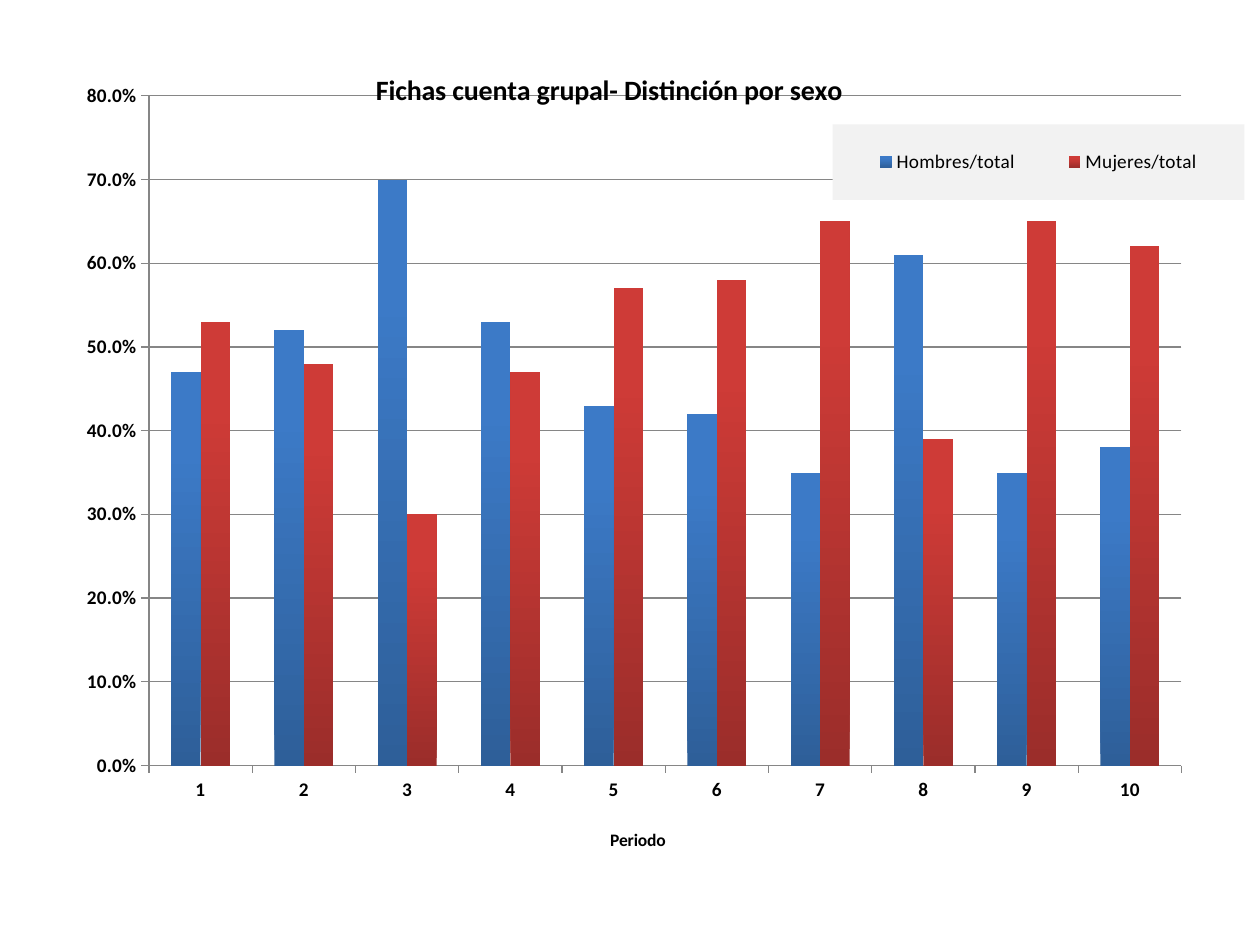
from lxml.etree import SubElement
from pptx import Presentation
from pptx.chart.data import CategoryChartData
from pptx.dml.color import RGBColor
from pptx.enum.chart import XL_CHART_TYPE as ChartType, XL_LEGEND_POSITION as LegendPos
from pptx.enum.chart import XL_TICK_MARK as Tick
from pptx.oxml.ns import qn
from pptx.util import Cm, Pt

# Content
TITLE = "Fichas cuenta grupal- Distinción por sexo"
AXIS_TITLE = "Periodo"
PERIODS = [str(n) for n in range(1, 11)]
# name, values, colour at the foot, colour at the top
SERIES = [
    ("Hombres/total", [0.47, 0.52, 0.70, 0.53, 0.43, 0.42, 0.35, 0.61, 0.35, 0.38],
     "2E5F99", "3C7AC7"),
    ("Mujeres/total", [0.53, 0.48, 0.30, 0.47, 0.57, 0.58, 0.65, 0.39, 0.65, 0.62],
     "9B2D2A", "CE3B37"),
]
FONT, BLACK, GREY, PALE = "Calibri", "000000", "868686", "F2F2F2"


def color(hex_value):
    return RGBColor.from_string(hex_value)


def style(font, size, bold=False):
    font.name, font.size, font.bold = FONT, Pt(size), bold
    font.color.rgb = color(BLACK)


def place(element, index, inner=False, **fractions):
    """Give a chart part a manual layout in fractions of the chart."""
    for old in element.findall(qn("c:layout")):
        element.remove(old)
    layout = SubElement(element, qn("c:layout"))
    element.insert(index, layout)
    manual = SubElement(layout, qn("c:manualLayout"))
    settings = {"layoutTarget": "inner"} if inner else {}
    settings.update(xMode="edge", yMode="edge", **fractions)
    for tag, value in settings.items():
        SubElement(manual, qn("c:" + tag)).set("val", str(value))


def set_title(title, text, size, x, y):
    tf = title.text_frame
    tf.text = text
    style(tf.paragraphs[0].runs[0].font, size, True)
    place(title._element, 1, x=x, y=y)


prs = Presentation()
prs.slide_width, prs.slide_height = Cm(25.4), Cm(19.05)
s = prs.slides.add_slide(prs.slide_layouts[6])

# Chart
data = CategoryChartData(number_format="0.0%")
data.categories = PERIODS
for name, values, *_ in SERIES:
    data.add_series(name, values)
chart = s.shapes.add_chart(ChartType.COLUMN_CLUSTERED, Cm(-0.23), Cm(1.07),
                           Cm(25.86), Cm(16.92), data).chart
style(chart.font, 10)
place(chart._chartSpace.chart.plotArea, 0, inner=True, x=0.125, y=0.051, w=0.805, h=0.798)

# Columns
plot = chart.plots[0]
plot.gap_width, plot.overlap, plot.vary_by_categories = 150, 0, False
for series, (_, _, foot, top) in zip(plot.series, SERIES):
    series.invert_if_negative = False
    fill = series.format.fill
    fill.gradient()
    fill.gradient_angle = 90
    for stop, position, shade in zip(fill.gradient_stops, (0, 0.8), (foot, top)):
        stop.position, stop.color.rgb = position, color(shade)

# Axes
cat_axis, val_axis = chart.category_axis, chart.value_axis
for axis in (cat_axis, val_axis):
    style(axis.tick_labels.font, 11, True)
    axis.major_tick_mark = Tick.OUTSIDE
    axis.format.line.color.rgb = color(GREY)
    axis.format.line.width = Pt(0.75)
val_axis.minimum_scale, val_axis.maximum_scale, val_axis.major_unit = 0, 0.8, 0.1
val_axis.tick_labels.number_format = "0.0%"
val_axis.tick_labels.number_format_is_linked = False
val_axis.has_major_gridlines = True
val_axis.major_gridlines.format.line.color.rgb = color(GREY)
val_axis.major_gridlines.format.line.width = Pt(0.75)

# Titles
set_title(chart.chart_title, TITLE, 16, 0.298, 0.015)
chart.chart_title.include_in_layout = False
set_title(cat_axis.axis_title, AXIS_TITLE, 10, 0.482, 0.92)

# Legend
chart.has_legend = True
legend = chart.legend
legend.position, legend.include_in_layout = LegendPos.RIGHT, False
style(legend.font, 11)
place(legend._element, 1, x=0.658, y=0.085, w=0.321, h=0.09)
sp_pr = SubElement(legend._element, qn("c:spPr"))
legend._element.find(qn("c:txPr")).addprevious(sp_pr)
solid = SubElement(sp_pr, qn("a:solidFill"))
SubElement(solid, qn("a:srgbClr")).set("val", PALE)

prs.save("out.pptx")
